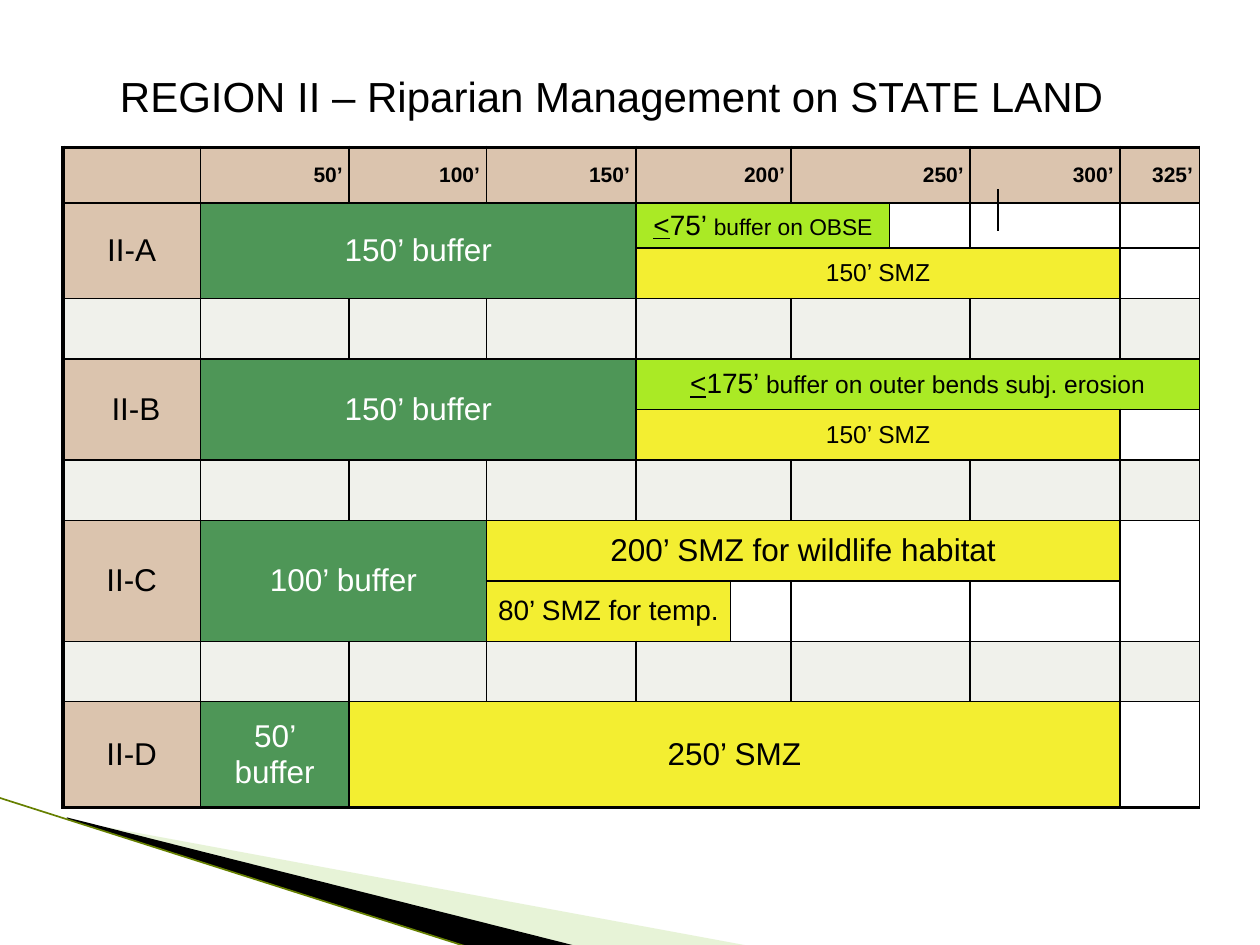
from lxml import etree
from pptx import Presentation
from pptx.dml.color import RGBColor
from pptx.enum.shapes import MSO_CONNECTOR
from pptx.enum.text import MSO_ANCHOR, PP_ALIGN
from pptx.oxml.ns import qn
from pptx.util import Inches, Pt

CENTER, RIGHT = PP_ALIGN.CENTER, PP_ALIGN.RIGHT
MIDDLE = MSO_ANCHOR.MIDDLE
STRAIGHT = MSO_CONNECTOR.STRAIGHT

COLORS = {
    "tan": "DBC4AE", "green": "4E9657", "lime": "AAEA25", "yellow": "F3EE31",
    "gap": "F0F1EB", "white": "FFFFFF", "black": "000000",
    "pale": "C3E19D", "olive": "668000",
}


def rgb(name):
    return RGBColor.from_string(COLORS[name])


def write(tf, text, size=18, color="black", align=CENTER, bold=False):
    """Fill a text frame; text is a string or a list of (text, size, underline)."""
    runs = [(text, size, False)] if isinstance(text, str) else text
    p = tf.paragraphs[0]
    p.alignment = align
    for words, points, underline in runs:
        r = p.add_run()
        r.text = words
        r.font.name = "Arial"
        r.font.size = Pt(points)
        r.font.bold = bold
        r.font.underline = underline
        r.font.color.rgb = rgb(color)


prs = Presentation()
prs.slide_width, prs.slide_height = Inches(10), Inches(7.5)
px, py = prs.slide_width / 100, prs.slide_height / 100  # one percent of the slide
s = prs.slides.add_slide(prs.slide_layouts[6])

# Swoosh in the lower left corner
swoosh = [
    ("pale", 40, [(5.5, 86.8), (59.5, 100.1), (45.6, 100.1), (5.5, 86.7)]),
    ("black", 100, [(5.3, 86.5), (45.7, 100.1), (37.2, 100.2), (5.4, 86.7)]),
]
for color, opacity, points in swoosh:
    corners = [(int(x * px), int(y * py)) for x, y in points]
    builder = s.shapes.build_freeform(*corners[0])
    builder.add_line_segments(corners[1:])
    sp = builder.convert_to_shape()
    sp.shadow.inherit = False
    sp.line.fill.background()
    sp.fill.solid()
    sp.fill.fore_color.rgb = rgb(color)
    if opacity < 100:
        clr = sp.fill._xPr.find(qn("a:solidFill"))[0]
        etree.SubElement(clr, qn("a:alpha"), val=str(opacity * 1000))

# Table grid
cols = [1.09, 1.18, 1.09, 1.19, 0.75, 0.48, 0.78, 0.64, 1.19, 0.63]
rows = [0.44, 0.36, 0.4, 0.48, 0.4, 0.4, 0.48, 0.48, 0.48, 0.48, 0.84]
last = len(rows) - 1
frame = s.shapes.add_table(len(rows), len(cols), int(5 * px), int(15.6 * py),
                           Inches(sum(cols)), Inches(sum(rows)))
table = frame.table
table.first_row = table.horz_banding = False
for col, width in zip(table.columns, cols):
    col.width = Inches(width)
for row, height in zip(table.rows, rows):
    row.height = Inches(height)

gap_rows = (3, 6, 9)
for i in range(len(rows)):
    for j in range(len(cols)):
        cell = table.cell(i, j)
        cell.margin_top = cell.margin_bottom = 0
        tcPr = cell._tc.get_or_add_tcPr()
        thick = {"L": j == 0, "R": False, "T": i == 0, "B": i == last}
        for side, heavy in thick.items():
            ln = etree.SubElement(tcPr, qn("a:ln" + side),
                                  w=str(Pt(2.25 if heavy else 1)))
            fill = etree.SubElement(ln, qn("a:solidFill"))
            etree.SubElement(fill, qn("a:srgbClr"), val=COLORS["black"])
        cell.fill.solid()
        cell.fill.fore_color.rgb = rgb(
            "tan" if i == 0 else "gap" if i in gap_rows else "white")

# Merged cells without text: row, column, rows down, columns across
blanks = [(i, j, 1, 2) for i in gap_rows for j in (4, 6)]
blanks += [(7, 9, 2, 1), (8, 6, 1, 2)]
for i, j, down, across in blanks:
    table.cell(i, j).merge(table.cell(i + down - 1, j + across - 1))

# Cells with text: row, column, rows down, columns across, fill, text, size
bars = [
    (1, 0, 2, 1, "tan", "II-A", 18),
    (1, 1, 2, 3, "green", "150’ buffer", 18),
    (1, 4, 1, 3, "lime",
     [("<", 16, True), ("75’ ", 16, False), ("buffer on OBSE", 13, False)], 16),
    (2, 4, 1, 5, "yellow", "150’ SMZ", 14),
    (4, 0, 2, 1, "tan", " II-B", 18),
    (4, 1, 2, 3, "green", "150’ buffer", 18),
    (4, 4, 1, 6, "lime",
     [("<", 16, True), ("175’ ", 16, False),
      ("buffer on outer bends subj. erosion", 14, False)], 16),
    (5, 4, 1, 5, "yellow", "150’ SMZ", 14),
    (7, 0, 2, 1, "tan", "II-C", 18),
    (7, 1, 2, 2, "green", "100’ buffer", 18),
    (7, 3, 1, 6, "yellow", "200’ SMZ for wildlife habitat", 18),
    (8, 3, 1, 2, "yellow", "80’ SMZ for temp.", 16),
    (10, 0, 1, 1, "tan", "II-D", 18),
    (10, 1, 1, 1, "green", "50’ buffer", 18),
    (10, 2, 1, 7, "yellow", "250’ SMZ", 18),
]
distances = [(1, 1, "50’"), (2, 1, "100’"), (3, 1, "150’"), (4, 2, "200’"),
             (6, 2, "250’"), (8, 1, "300’"), (9, 1, "325’")]
bars += [(0, j, 1, across, "tan", text, 12) for j, across, text in distances]

for i, j, down, across, color, text, size in bars:
    cell = table.cell(i, j)
    if down * across > 1:
        cell.merge(table.cell(i + down - 1, j + across - 1))
    header = i == 0
    tight = (i, j) == (8, 3)
    cell.margin_top = cell.margin_bottom = Inches(0.05)
    cell.margin_left = cell.margin_right = Inches(
        0.05 if header else 0.03 if tight else 0.1)
    cell.vertical_anchor = MIDDLE
    cell.fill.fore_color.rgb = rgb(color)
    write(cell.text_frame, text, size=size, bold=header,
          color="white" if color == "green" else "black",
          align=RIGHT if header else CENTER)

# Title
title = s.shapes.add_textbox(int(6.9 * px), int(6.8 * py),
                             int(83.3 * px), int(6.8 * py))
title.text_frame.word_wrap = True
write(title.text_frame, "REGION II – Riparian Management on STATE LAND", size=24)

# Swoosh edge and the tick under the 300’ heading
lines = [((-0.1, 84.4), (37.1, 100.2), "olive", 0.95),
         ((79.2, 20), (79.2, 24.4), "black", 0.75)]
for (x1, y1), (x2, y2), color, width in lines:
    line = s.shapes.add_connector(STRAIGHT, int(x1 * px), int(y1 * py),
                                  int(x2 * px), int(y2 * py))
    line.line.color.rgb = rgb(color)
    line.line.width = Pt(width)
    etree.SubElement(line._element.spPr, qn("a:effectLst"))

prs.save("out.pptx")
